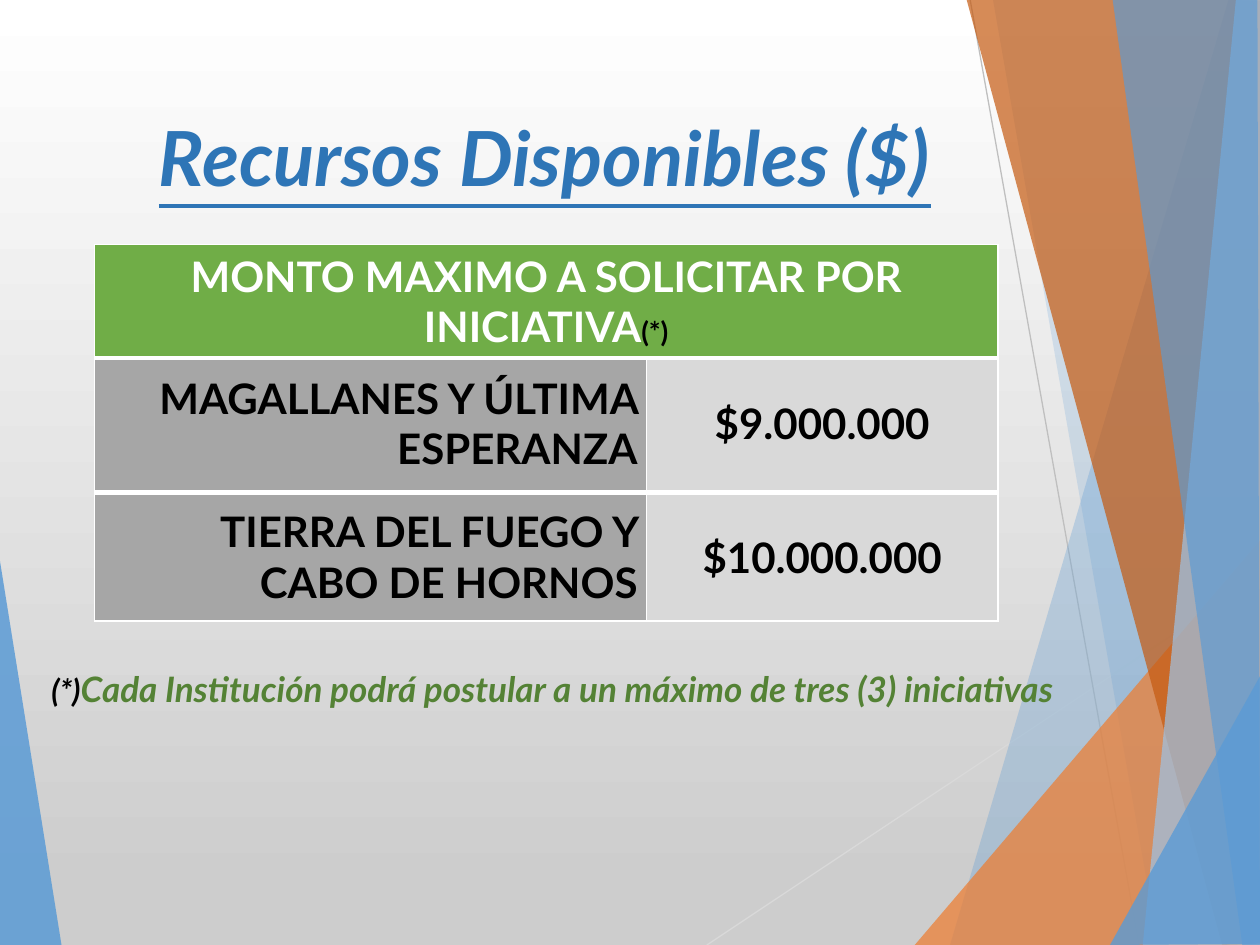
import pptx
import pptx.dml.color
import pptx.enum.shapes
import pptx.enum.text
import pptx.oxml.ns
import pptx.util
from lxml import etree

Inches = pptx.util.Inches
Pt = pptx.util.Pt
RGBColor = pptx.dml.color.RGBColor
Align = pptx.enum.text.PP_ALIGN
Anchor = pptx.enum.text.MSO_ANCHOR
qn = pptx.oxml.ns.qn

WHITE = RGBColor(0xFF, 0xFF, 0xFF)
BLACK = RGBColor(0, 0, 0)
SILVER = RGBColor(0xCD, 0xCD, 0xCD)
PALE_GRAY = RGBColor(0xD9, 0xD9, 0xD9)
LINE_GRAY = RGBColor(0xBF, 0xBF, 0xBF)
LABEL_GRAY = RGBColor(0xA6, 0xA6, 0xA6)
BLUE = RGBColor(0x5B, 0x9B, 0xD5)
LIGHT_BLUE = RGBColor(0x9D, 0xC3, 0xE6)
TITLE_BLUE = RGBColor(0x2E, 0x75, 0xB6)
ORANGE = RGBColor(0xED, 0x7D, 0x31)
RUST = RGBColor(0xC5, 0x5A, 0x11)
GREEN = RGBColor(0x70, 0xAD, 0x47)
DARK_GREEN = RGBColor(0x54, 0x82, 0x35)


class SlideBuilder:
    """Holds the font and the current page, and draws each kind of element."""

    font = "Lato"

    def __init__(self, page):
        self.page = page

    def background(self, top, bottom):
        fill = self.page.background.fill
        fill.gradient()
        fill.gradient_angle = 270
        for stop, color, position in zip(fill.gradient_stops, (top, bottom), (0, 0.94)):
            stop.color.rgb = color
            stop.position = position

    def facet(self, points, color, opacity):
        corners = [(Inches(x), Inches(y)) for x, y in points]
        outline = self.page.shapes.build_freeform(*corners[0], scale=1.0)
        outline.add_line_segments(corners[1:], close=True)
        shape = outline.convert_to_shape()
        shape.shadow.inherit = False
        shape.line.fill.background()
        shape.fill.solid()
        shape.fill.fore_color.rgb = color
        tint = shape._element.spPr.find(qn("a:solidFill"))[0]
        etree.SubElement(tint, qn("a:alpha"), val=str(opacity * 1000))

    def line(self, start, end, color):
        points = [Inches(value) for value in (*start, *end)]
        line = self.page.shapes.add_connector(
            pptx.enum.shapes.MSO_CONNECTOR.STRAIGHT, *points)
        line.line.color.rgb = color
        line.line.width = Pt(0.75)
        etree.SubElement(line._element.spPr, qn("a:effectLst"))

    def add_spans(self, frame, spans, align, italic=False, underline=False):
        para = frame.paragraphs[0]
        para.alignment = align
        for text, size, color in spans:
            span = para.add_run()
            span.text = text
            font = span.font
            font.name, font.size, font.bold = self.font, Pt(size), True
            font.italic, font.underline = italic, underline
            font.color.rgb = color

    def text(self, place, spans, align, inset=0.05, underline=False):
        box = self.page.shapes.add_textbox(*map(Inches, place))
        frame = box.text_frame
        frame.word_wrap = True
        frame.margin_top = Inches(inset)
        self.add_spans(frame, spans, align, italic=True, underline=underline)

    def table(self, left, top, widths, heights):
        table = self.page.shapes.add_table(
            len(heights), len(widths), Inches(left), Inches(top),
            Inches(sum(widths)), Inches(sum(heights))).table
        for column, width in zip(table.columns, widths):
            column.width = Inches(width)
        for row, height in zip(table.rows, heights):
            row.height = Inches(height)
        return table

    def cell(self, cell, spans, align, color, borders, anchor=Anchor.MIDDLE, tight=False):
        cell.vertical_anchor = anchor
        if tight:
            cell.margin_left = cell.margin_right = Inches(0.07)
            cell.margin_top = cell.margin_bottom = 0
        cell.fill.solid()
        cell.fill.fore_color.rgb = color
        self.add_spans(cell.text_frame, spans, align)
        properties = cell._tc.get_or_add_tcPr()
        for index, (side, width) in enumerate(zip("LRTB", borders)):
            edge = etree.Element(qn(f"a:ln{side}"), w=str(Pt(width)))
            paint = etree.SubElement(edge, qn("a:solidFill"))
            etree.SubElement(paint, qn("a:srgbClr"), val=str(WHITE))
            properties.insert(index, edge)


def main():
    deck = pptx.Presentation()
    deck.slide_width, deck.slide_height = Inches(10), Inches(7.5)
    slide = SlideBuilder(deck.slides.add_slide(deck.slide_layouts[6]))
    slide.background(WHITE, SILVER)

    slide.facet([(-0.01, 4.39), (0.49, 7.51), (-0.01, 7.5)], BLUE, 85)
    slide.line((5.61, 7.5), (10.01, 4.57), PALE_GRAY)
    slide.line((7.7, 0), (9.04, 7.5), LINE_GRAY)
    facets = [
        ([(9.75, 0), (7.54, 7.5), (10.02, 7.51), (10.01, 0.01)], BLUE, 30),
        ([(7.88, -0.01), (9.19, 7.5), (10.01, 7.5), (10.01, -0.01)], BLUE, 20),
        ([(7.26, 7.5), (10, 4.29), (10.01, 7.5)], ORANGE, 72),
        ([(7.67, -0.01), (9.7, 7.5), (10.01, 7.49), (10.01, -0.01)], RUST, 70),
        ([(9.81, -0.01), (9.07, 7.5), (10.01, 7.5), (10, -0.01)], LIGHT_BLUE, 70),
        ([(8.83, -0.01), (9.86, 7.5), (10, 7.5), (9.98, -0.01)], BLUE, 65),
        ([(8.81, 7.5), (10.01, 5.35), (10.01, 7.49)], BLUE, 80),
    ]
    for points, color, opacity in facets:
        slide.facet(points, color, opacity)

    slide.text((0.31, 0.68, 8.03, 0.87), [("Recursos Disponibles ($)", 43.4, TITLE_BLUE)],
               Align.CENTER, inset=0.2, underline=True)

    amounts = [
        ("MAGALLANES Y ÚLTIMA ESPERANZA", "$9.000.000", 3),
        ("TIERRA DEL FUEGO Y CABO DE HORNOS", "$10.000.000", 1),
    ]
    table = slide.table(0.75, 2.81, (4.38, 2.79), (1.1, 1.02))
    for row, (place, amount, bottom) in enumerate(amounts):
        top = 3 if row else 1
        borders = (1, 1, top, bottom)
        slide.cell(table.cell(row, 0), [(place, 24, BLACK)], Align.RIGHT,
                   LABEL_GRAY, borders, tight=True)
        slide.cell(table.cell(row, 1), [(amount, 24, BLACK)], Align.CENTER,
                   PALE_GRAY, borders)

    heading = slide.table(0.75, 1.94, (7.17,), (0.9,))
    slide.cell(heading.cell(0, 0),
               [("MONTO MAXIMO A SOLICITAR POR INICIATIVA", 24, WHITE), ("(*)", 16, BLACK)],
               Align.CENTER, GREEN, (1, 1, 1, 3), anchor=Anchor.TOP)

    slide.text((0.31, 5.25, 8.43, 0.77),
               [("(*)", 18, BLACK),
                ("Cada Institución podrá postular a un máximo de tres (3) iniciativas",
                 20, DARK_GREEN)], Align.LEFT)
    deck.save("out.pptx")


if __name__ == "__main__":
    main()
